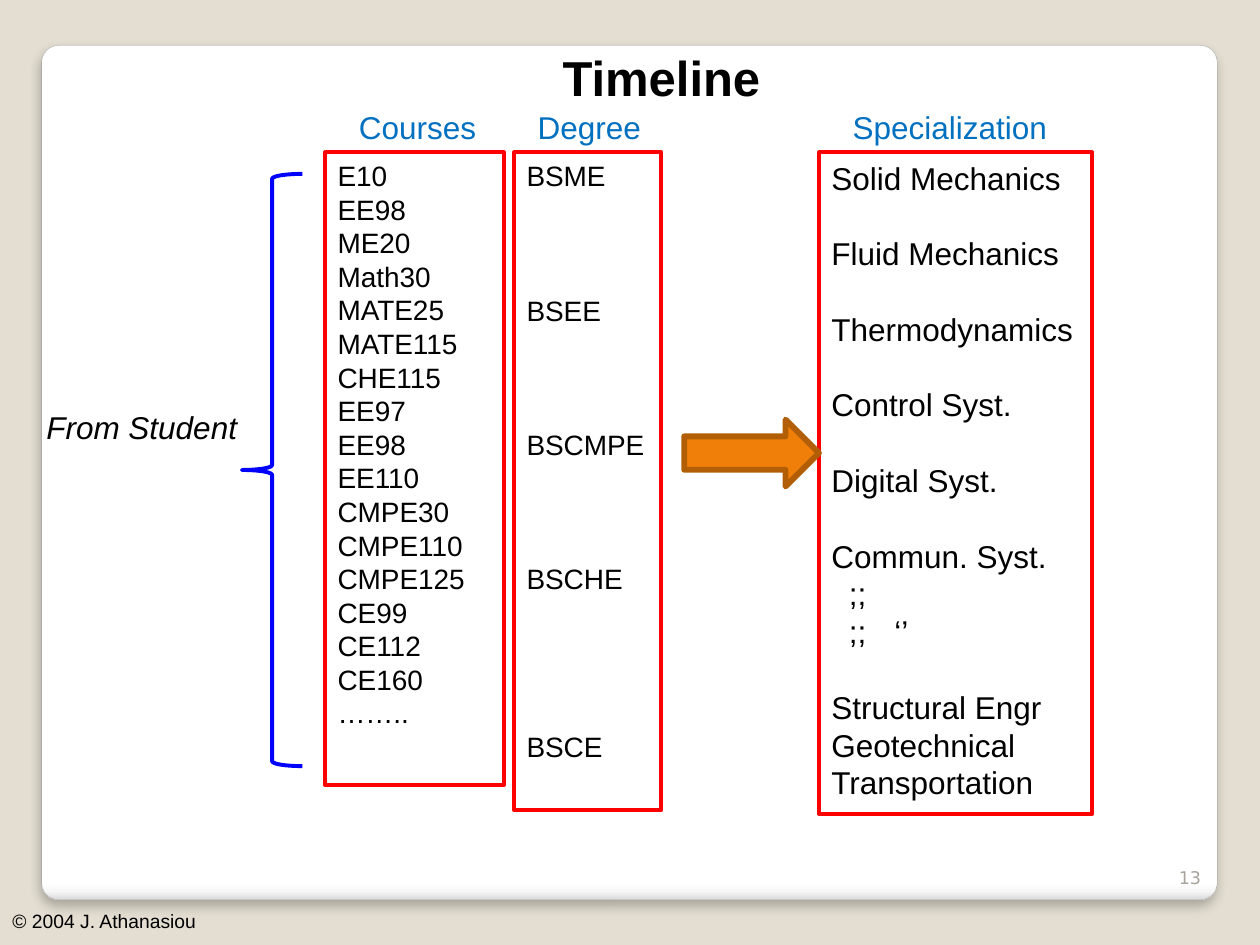
from typing import NamedTuple

from lxml.etree import SubElement
from pptx import Presentation
from pptx.dml.color import RGBColor
from pptx.enum.shapes import MSO_SHAPE as Preset
from pptx.enum.text import MSO_ANCHOR as Anchor, PP_ALIGN as Align
from pptx.oxml.ns import qn
from pptx.util import Pt

RED, BLUE, BLACK, WHITE = "FF0000", "0070C0", "000000", "FFFFFF"
LINE_PITCH = 1.2
COLUMN_TOP, HEADING_TOP = 87.1, 58.3


class Box(NamedTuple):
    left: float
    top: float
    width: float
    height: float


class Row(NamedTuple):
    text: str
    blank_lines: int = 0
    indent: float = 0


class Column(NamedTuple):
    heading: str
    heading_left: float
    heading_width: float
    left: float
    width: float
    height: float
    size: float
    fill: str | None
    rows: list[Row]


COURSES = ("E10 EE98 ME20 Math30 MATE25 MATE115 CHE115 EE97 EE98 EE110 "
           "CMPE30 CMPE110 CMPE125 CE99 CE112 CE160 ……..").split()
DEGREES = [Row("BSME"), Row("BSEE", 3), Row("BSCMPE", 3), Row("BSCHE", 3), Row("BSCE", 4)]
SPECIALIZATIONS = [
    Row("Solid Mechanics"),
    *(Row(field, 1) for field in ("Fluid Mechanics", "Thermodynamics", "Control Syst.",
                                  "Digital Syst.", "Commun. Syst.")),
    Row(";;", indent=10),
    Row(";;\t‘’", indent=10),
    Row("Structural Engr", 1),
    Row("Geotechnical"),
    Row("Transportation"),
]
COLUMNS = [
    Column("Courses", 198, 90, 185.8, 102.2, 361.4, 16, None, [Row(c) for c in COURSES]),
    Column("Degree", 300.2, 90, 293.8, 84.2, 375.8, 16, WHITE, DEGREES),
    Column("Specialization", 480.2, 131.8, 468, 156.2, 378, 18, None, SPECIALIZATIONS),
]


def rgb(value: str) -> RGBColor:
    return RGBColor.from_string(value)


def place(box: Box) -> list[Pt]:
    return [Pt(length) for length in box]


def write(shape, rows: list[Row], *, size: float, color: str = BLACK, font: str = "Arial",
          bold: bool = False, italic: bool = False, align=Align.LEFT, anchor=Anchor.TOP) -> None:
    frame = shape.text_frame
    frame.word_wrap = True
    frame.vertical_anchor = anchor
    for index, row in enumerate(rows):
        paragraph = frame.add_paragraph() if index else frame.paragraphs[0]
        paragraph.alignment = align
        paragraph.line_spacing = Pt(size * LINE_PITCH)
        paragraph.space_before = Pt(row.blank_lines * size * LINE_PITCH)
        if row.indent:
            properties = paragraph._p.get_or_add_pPr()
            properties.set("marL", "0")
            properties.set("indent", str(Pt(row.indent)))
            tabs = SubElement(properties, qn("a:tabLst"))
            SubElement(tabs, qn("a:tab"), pos=str(Pt(3 * row.indent)), algn="l")
        run = paragraph.add_run()
        run.text = row.text
        run.font.name, run.font.size = font, Pt(size)
        run.font.bold, run.font.italic = bold, italic
        run.font.color.rgb = rgb(color)


def label(slide, box: Box, text: str, **text_format) -> None:
    write(slide.shapes.add_textbox(*place(box)), [Row(text)], **text_format)


def draw(slide, preset, box: Box, *, line: str, weight: float, fill: str | None = None):
    shape = slide.shapes.add_shape(preset, *place(box))
    shape.shadow.inherit = False
    shape.line.color.rgb = rgb(line)
    shape.line.width = Pt(weight)
    if fill:
        shape.fill.solid()
        shape.fill.fore_color.rgb = rgb(fill)
    else:
        shape.fill.background()
    return shape


def draw_card(slide) -> None:
    card = draw(slide, Preset.ROUNDED_RECTANGLE, Box(23.8, 25.9, 671.8, 488.2),
                line="A4A4A4", weight=0.16)
    card.adjustments[0] = 0.02
    card.fill.gradient()
    card.fill.gradient_angle = 270
    properties = card._element.spPr
    stops = properties.find(".//" + qn("a:gsLst"))
    for stop in list(stops):
        stops.remove(stop)
    for percent, color in ((0, WHITE), (98, WHITE), (99, "F7F7F7"), (100, "DADADA")):
        stop = SubElement(stops, qn("a:gs"), pos=str(percent * 1000))
        SubElement(stop, qn("a:srgbClr"), val=color)
    shadow = SubElement(properties.find(qn("a:effectLst")), qn("a:outerShdw"),
                        blurRad=str(Pt(6)), dist=str(Pt(4)), dir="5400000", rotWithShape="0")
    shade = SubElement(shadow, qn("a:srgbClr"), val=BLACK)
    SubElement(shade, qn("a:alpha"), val="25000")


def draw_column(slide, column: Column) -> None:
    frame = draw(slide, Preset.RECTANGLE,
                 Box(column.left, COLUMN_TOP, column.width, column.height),
                 line=RED, weight=2.25, fill=column.fill)
    write(frame, column.rows, size=column.size)
    label(slide, Box(column.heading_left, HEADING_TOP, column.heading_width, 28.8),
          column.heading, size=18, color=BLUE)


def main() -> None:
    deck = Presentation()
    deck.slide_width, deck.slide_height = Pt(720), Pt(540)
    slide = deck.slides.add_slide(deck.slide_layouts[6])
    slide.background.fill.solid()
    slide.background.fill.fore_color.rgb = rgb("E3DED1")

    draw_card(slide)
    label(slide, Box(657.4, 481, 36, 30.2), "13", size=10, font="DejaVu Sans",
          color="A8A49B", align=Align.RIGHT, anchor=Anchor.BOTTOM)
    for column in COLUMNS:
        draw_column(slide, column)
    label(slide, Box(19.4, 229.7, 178.6, 28.8), "From Student", size=18, italic=True)
    brace = draw(slide, Preset.LEFT_BRACE, Box(138.2, 99.4, 34.6, 338.4),
                 line="0000FF", weight=2.25)
    brace.adjustments[0] = 0.08
    label(slide, Box(180, 23.8, 396, 41), "Timeline", size=28, bold=True, align=Align.CENTER)
    label(slide, Box(0, 516.2, 180, 20.9), "© 2004 J. Athanasiou", size=11)
    draw(slide, Preset.RIGHT_ARROW, Box(391, 239.8, 77, 38.2),
         line="B25E07", weight=3.35, fill="F07F09")
    deck.save("out.pptx")


if __name__ == "__main__":
    main()
